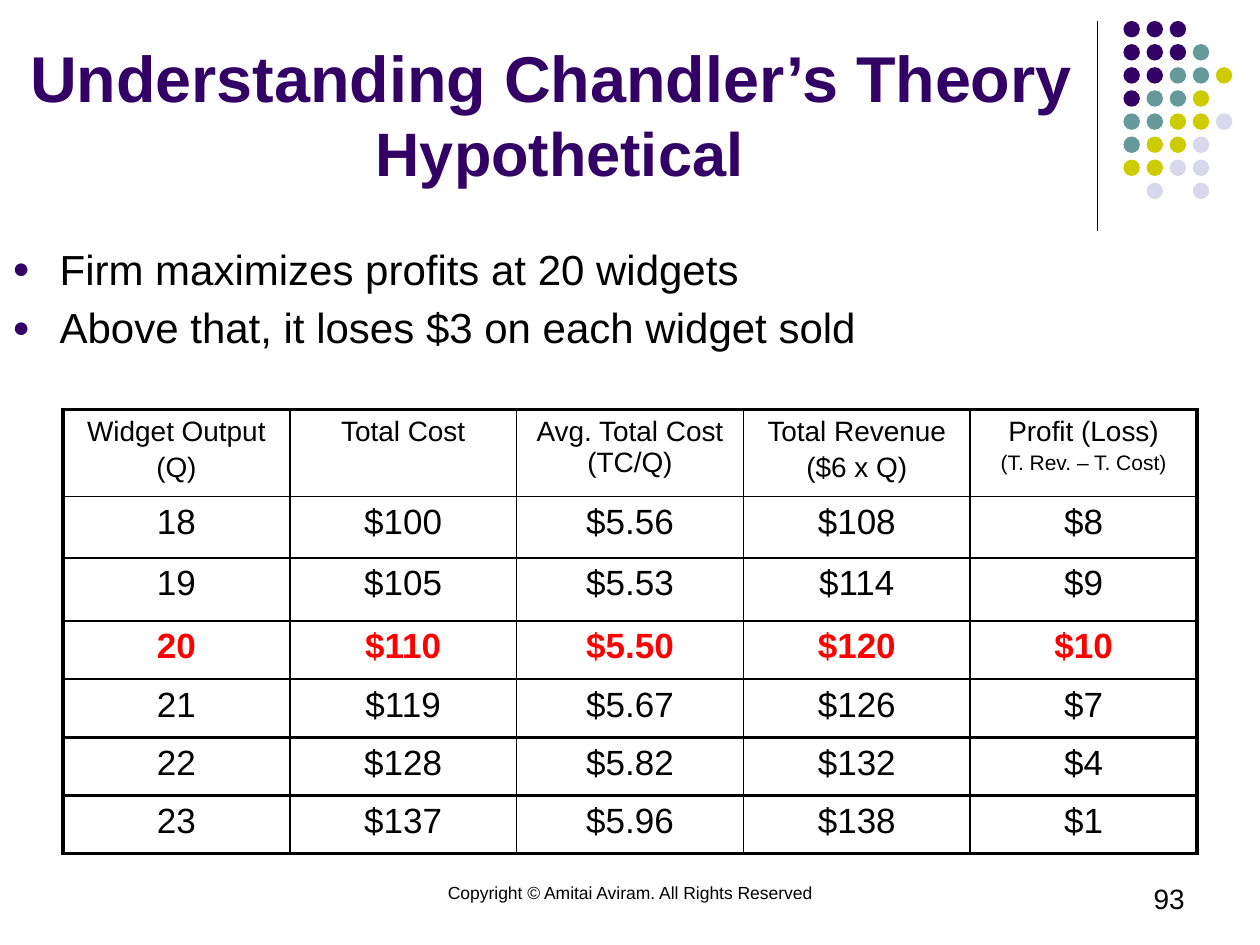
from copy import deepcopy

from lxml import etree
from pptx import Presentation
from pptx import util as u
from pptx.dml import color
from pptx.enum import shapes, text
from pptx.oxml import ns

PURPLE, BLACK, RED = "330066", "000000", "FF0000"
DOT_COLORS = {"p": PURPLE, "t": "669999", "y": "CCCC00", "l": "D8D8EC"}
DOT_ROWS = ["ppp", "pppt", "pptty", "ptty", "ttyyl", "tyyl", "yyll", " l l"]
HEADERS = [
    [("Widget Output", 16), ("(Q)", 16)],
    [("Total Cost", 16)],
    [("Avg. Total Cost\n(TC/Q)", 16)],
    [("Total Revenue", 16), ("($6 x Q)", 16)],
    [("Profit (Loss)", 16), ("(T. Rev. – T. Cost)", 12)],
]
ROWS = [
    ["18", "$100", "$5.56", "$108", "$8"],
    ["19", "$105", "$5.53", "$114", "$9"],
    ["20", "$110", "$5.50", "$120", "$10"],
    ["21", "$119", "$5.67", "$126", "$7"],
    ["22", "$128", "$5.82", "$132", "$4"],
    ["23", "$137", "$5.96", "$138", "$1"],
]
BEST_OUTPUT = "20"
ROW_HEIGHTS = [49.6, 35.2, 36] + [33.3] * 4
THIN, THICK = 1, 2.25
FIRST_THICK_RULE = 5  # horizontal rules from this one down are thick


def rgb(value):
    return color.RGBColor.from_string(value)


def add_xml(parent, tag, **attrs):
    return etree.SubElement(parent, ns.qn(tag), attrs)


class Deck:
    font = "Arial"
    aligns = {"l": text.PP_ALIGN.LEFT, "c": text.PP_ALIGN.CENTER,
              "r": text.PP_ALIGN.RIGHT}

    def __init__(self, width, height):
        self.prs = Presentation()
        self.prs.slide_width, self.prs.slide_height = u.Pt(width), u.Pt(height)
        self.s = self.prs.slides.add_slide(self.prs.slide_layouts[5])

    def fill_text(self, tf, paras, align="l", hue=BLACK, bold=False):
        """Fill a text frame from (text, size) pairs, one per paragraph."""
        for i, (words, size) in enumerate(paras):
            p = tf.paragraphs[0] if i == 0 else tf.add_paragraph()
            p.text, p.alignment = words, self.aligns[align]
            p.space_before = u.Pt(0.2 * size if i else 0)
            form = {"name": self.font, "size": u.Pt(size), "bold": bold}
            for r in p.runs:
                for key, value in form.items():
                    setattr(r.font, key, value)
                r.font.color.rgb = rgb(hue)
            for br in p._p.findall(ns.qn("a:br")):
                br.append(deepcopy(p.runs[0]._r.rPr))

    def title(self, words, box, sizes):
        sp = self.s.shapes.title
        sp.left, sp.top, sp.width, sp.height = map(u.Pt, box)
        tf = sp.text_frame
        form = {"word_wrap": True, "auto_size": text.MSO_AUTO_SIZE.NONE,
                "vertical_anchor": text.MSO_ANCHOR.BOTTOM}
        for key, value in form.items():
            setattr(tf, key, value)
        self.fill_text(tf, [(words, sizes[0])], "c", PURPLE, True)
        for r, size in zip(tf.paragraphs[0].runs, sizes):
            r.font.size = u.Pt(size)

    def text(self, paras, box, align="l"):
        tf = self.s.shapes.add_textbox(*map(u.Pt, box)).text_frame
        tf.word_wrap = True
        self.fill_text(tf, paras, align)
        return tf

    def bullets(self, lines, box, size, indent):
        tf = self.text([(line, size) for line in lines], box)
        for p in tf.paragraphs:
            pPr = p._p.get_or_add_pPr()
            pPr.set("marL", str(u.Pt(indent)))
            pPr.set("indent", str(u.Pt(-indent)))
            add_xml(add_xml(pPr, "a:buClr"), "a:srgbClr", val=PURPLE)
            add_xml(pPr, "a:buSzPct", val="70000")
            add_xml(pPr, "a:buFont", typeface=self.font)
            add_xml(pPr, "a:buChar", char="●")

    def line(self, x1, y1, x2, y2, weight):
        ln = self.s.shapes.add_connector(
            shapes.MSO_CONNECTOR.STRAIGHT, *map(u.Pt, (x1, y1, x2, y2)))
        ln.line.width, ln.line.color.rgb = u.Pt(weight), rgb(BLACK)
        add_xml(ln._element.spPr, "a:effectLst")

    def dot(self, x, y, size, hue):
        sp = self.s.shapes.add_shape(
            shapes.MSO_SHAPE.OVAL, *map(u.Pt, (x, y, size, size)))
        sp.shadow.inherit = False
        sp.fill.solid()
        sp.fill.fore_color.rgb = rgb(hue)
        sp.line.fill.background()

    def borders(self, cell, weights):
        """Set left, right, top and bottom border weights."""
        tcPr = cell._tc.get_or_add_tcPr()
        for side, weight in zip("LRTB", weights):
            ln = add_xml(tcPr, "a:ln" + side, w=str(u.Pt(weight)))
            add_xml(add_xml(ln, "a:solidFill"), "a:srgbClr", val=BLACK)

    def table(self, headers, rows, x, y, col_width, heights):
        n_rows, n_cols = len(rows) + 1, len(headers)
        tbl = self.s.shapes.add_table(
            n_rows, n_cols, u.Pt(x), u.Pt(y),
            u.Pt(col_width * n_cols), u.Pt(sum(heights))).table
        tbl.first_row = tbl.horz_banding = False
        for col in tbl.columns:
            col.width = u.Pt(col_width)
        for row, height in zip(tbl.rows, heights):
            row.height = u.Pt(height)
        v_rules = [THICK] + [THIN] * (n_cols - 1) + [THICK]
        h_rules = [THICK if i == 0 or i >= FIRST_THICK_RULE else THIN
                   for i in range(n_rows + 1)]
        body = [[[(value, 20)] for value in row] for row in rows]
        for i, row in enumerate([headers] + body):
            best = row[0][0][0] == BEST_OUTPUT
            for j, paras in enumerate(row):
                cell = tbl.cell(i, j)
                self.fill_text(cell.text_frame, paras, "c",
                               RED if best else BLACK, best)
                self.borders(cell, v_rules[j:j + 2] + h_rules[i:i + 2])
                cell.fill.background()


def main():
    deck = Deck(720, 540)
    deck.line(627, 12, 627, 132, 0.75)
    for i, row in enumerate(DOT_ROWS):
        for j, key in enumerate(row):
            if key in DOT_COLORS:
                deck.dot(642 + 13.2 * j, 12 + 13.2 * i, 9.4, DOT_COLORS[key])
    deck.text([("Copyright © Amitai Aviram. All Rights Reserved", 10)],
              (246, 500.4, 228, 36), "c")
    deck.text([("93", 16)], (516, 500.4, 168, 36), "r")
    deck.title("Understanding Chandler’s Theory\n Hypothetical",
               (0, 0, 630, 111.6), (37, 35))
    deck.bullets(["Firm maximizes profits at 20 widgets",
                  "Above that, it loses $3 on each widget sold"],
                 (0, 135.4, 720, 86.4), 24, 27)
    deck.table(HEADERS, ROWS, 36, 234, 129.6, ROW_HEIGHTS)
    deck.prs.save("out.pptx")


if __name__ == "__main__":
    main()
